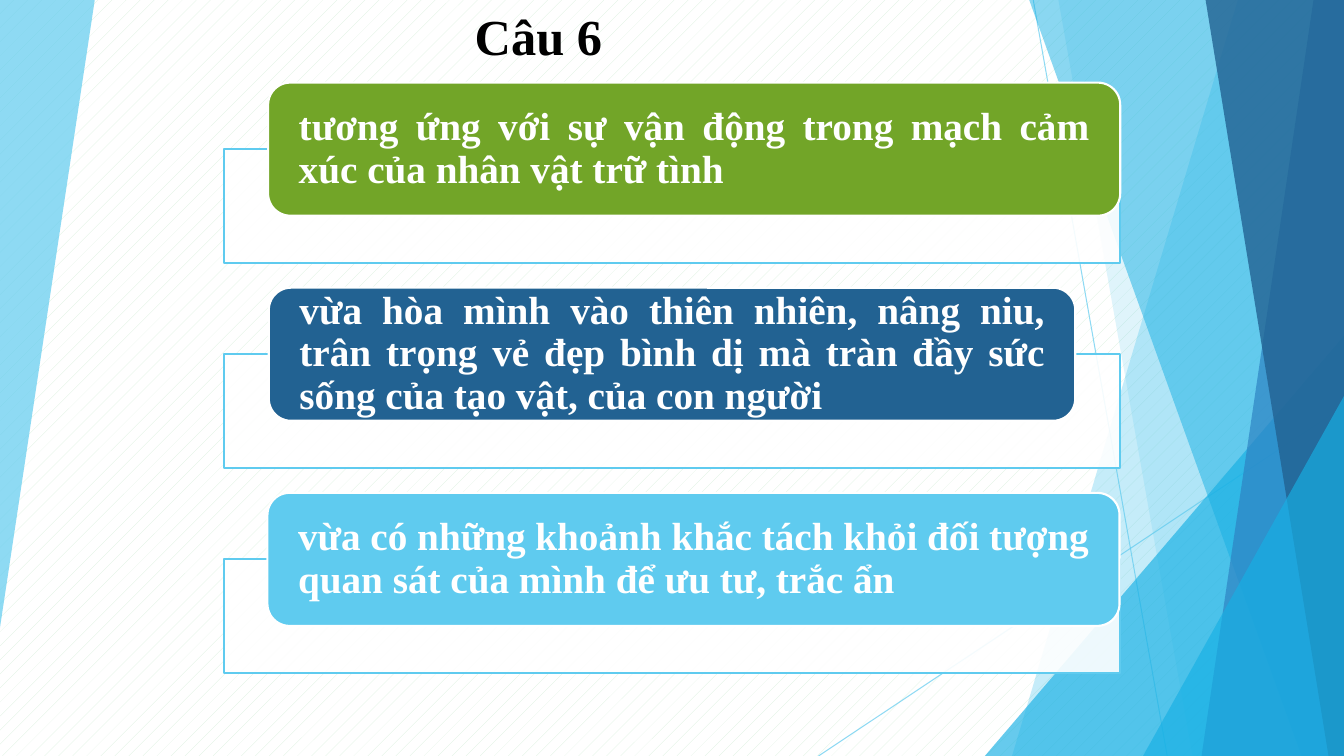
from dataclasses import dataclass

from lxml import etree
from pptx import Presentation
from pptx.dml.color import RGBColor
from pptx.enum.dml import MSO_PATTERN
from pptx.enum.shapes import MSO_CONNECTOR, MSO_SHAPE
from pptx.enum.text import MSO_ANCHOR, MSO_AUTO_SIZE, PP_ALIGN
from pptx.oxml.ns import qn
from pptx.util import Inches, Pt

RECTANGLE = MSO_SHAPE.RECTANGLE
ROUNDED = MSO_SHAPE.ROUNDED_RECTANGLE
TRIANGLE = MSO_SHAPE.ISOSCELES_TRIANGLE
STRAIGHT = MSO_CONNECTOR.STRAIGHT
DOTS = MSO_PATTERN.PERCENT_5
MIDDLE = MSO_ANCHOR.MIDDLE
GROW = MSO_AUTO_SIZE.SHAPE_TO_FIT_TEXT
JUSTIFY, LEFT = PP_ALIGN.JUSTIFY, PP_ALIGN.LEFT

SLIDE_WIDTH, SLIDE_HEIGHT = Inches(13.33), Inches(7.5)


@dataclass(frozen=True)
class Theme:
    font: str = "Times New Roman"
    title_size: float = 36
    card_size: float = 28
    outline: float = 1.5
    hairline: float = 0.75
    black: str = "000000"
    white: str = "FFFFFF"
    dots: str = "D8F0DB"
    sky: str = "5FCBEF"
    cyan: str = "17B0E4"
    blue: str = "2E83C3"
    navy: str = "226292"
    green: str = "72A528"


THEME = Theme()


# All positions and lengths below are percentages of the slide's width or height.
@dataclass(frozen=True)
class Facet:
    points: list[tuple[float, float]]
    color: str
    opacity: float


@dataclass(frozen=True)
class Corner:
    left: float
    top: float
    color: str = THEME.cyan
    opacity: float = 66


@dataclass(frozen=True)
class Ray:
    start: tuple[float, float]
    end: tuple[float, float]


@dataclass(frozen=True)
class Card:
    text: str
    color: str
    left: float
    width: float
    align: PP_ALIGN


def right_facet(top_x: float, bottom_x: float, color: str, opacity: float) -> Facet:
    return Facet([(top_x, 0), (100, 0), (100, 100), (bottom_x, 100)], color, opacity)


LEFT_WEDGE = Facet([(0, 0), (7.05, 0), (0, 83)], THEME.sky, 70)
RAYS = [Ray((76.88, 0), (86.85, 100)), Ray((100, 53.73), (60.9, 100))]
RIGHT_SIDE = [
    right_facet(92.1, 75.3, THEME.sky, 36),
    right_facet(78.75, 88.73, THEME.sky, 20),
    Corner(73.28, 44.4),
    right_facet(76.58, 96.83, THEME.cyan, 50),
    right_facet(97.73, 89.4, THEME.blue, 70),
    right_facet(89.7, 98.85, THEME.navy, 80),
    Corner(85.05, 52.4),
]
CARDS = [
    Card("tương ứng với sự vận động trong mạch cảm xúc của nhân vật trữ tình",
         THEME.green, 19.95, 63.4, JUSTIFY),
    Card("vừa hòa mình vào thiên nhiên, nâng niu, trân trọng vẻ đẹp bình dị "
         "mà tràn đầy sức sống của tạo vật, của con người",
         THEME.navy, 20, 60, JUSTIFY),
    Card("vừa có những khoảnh khắc tách khỏi đối tượng quan sát của mình "
         "để ưu tư, trắc ẩn",
         THEME.sky, 19.9, 63.4, LEFT),
]
RAIL_LEFT, RAIL_WIDTH, RAIL_HEIGHT = 16.67, 66.67, 15.07
CARD_TOP, CARD_HEIGHT, CARD_PITCH = 10.93, 17.6, 27.13
RAIL_DROP = 8.8


def across(share: float) -> int:
    return round(SLIDE_WIDTH * share / 100)


def down(share: float) -> int:
    return round(SLIDE_HEIGHT * share / 100)


def rgb(color: str) -> RGBColor:
    return RGBColor.from_string(color)


def set_opacity(fill_parent, percent: float) -> None:
    color = fill_parent.find(qn("a:solidFill")).find(qn("a:srgbClr"))
    etree.SubElement(color, qn("a:alpha")).set("val", str(round(percent * 1000)))


def paint(shape, color: str, opacity: float = 100, outline: str = "") -> None:
    shape.shadow.inherit = False
    shape.fill.solid()
    shape.fill.fore_color.rgb = rgb(color)
    if opacity < 100:
        set_opacity(shape.element.spPr, opacity)
    if outline:
        shape.line.color.rgb = rgb(outline)
        shape.line.width = Pt(THEME.outline)
    else:
        shape.line.fill.background()


def add_preset(slide, preset, left: float, top: float, width: float, height: float):
    return slide.shapes.add_shape(preset, across(left), down(top),
                                  across(width), down(height))


def add_facet(slide, facet: Facet) -> None:
    corners = [(across(x), down(y)) for x, y in facet.points]
    builder = slide.shapes.build_freeform(*corners[0])
    builder.add_line_segments(corners[1:], close=True)
    paint(builder.convert_to_shape(), facet.color, facet.opacity)


def add_corner(slide, corner: Corner) -> None:
    triangle = add_preset(slide, TRIANGLE, corner.left, corner.top,
                          100 - corner.left, 100 - corner.top)
    triangle.adjustments[0] = 1
    paint(triangle, corner.color, corner.opacity)


def add_ray(slide, ray: Ray) -> None:
    (x1, y1), (x2, y2) = ray.start, ray.end
    line = slide.shapes.add_connector(STRAIGHT, across(x1), down(y1), across(x2), down(y2))
    line.line.color.rgb = rgb(THEME.sky)
    line.line.width = Pt(THEME.hairline)
    properties = line.element.spPr
    set_opacity(properties.find(qn("a:ln")), 70)
    etree.SubElement(properties, qn("a:effectLst"))


def write(frame, text: str, size: float, color: str, align: PP_ALIGN):
    frame.word_wrap = True
    paragraph = frame.paragraphs[0]
    paragraph.alignment = align
    run = paragraph.add_run()
    run.text = text
    run.font.name = THEME.font
    run.font.size = Pt(size)
    run.font.bold = True
    run.font.color.rgb = rgb(color)
    return paragraph


def add_card(slide, card: Card, top: float) -> None:
    rail = add_preset(slide, RECTANGLE, RAIL_LEFT, top + RAIL_DROP, RAIL_WIDTH, RAIL_HEIGHT)
    paint(rail, THEME.white, 90, THEME.sky)
    plate = add_preset(slide, ROUNDED, card.left, top, card.width, CARD_HEIGHT)
    paint(plate, card.color, outline=THEME.white)
    frame = plate.text_frame
    frame.vertical_anchor = MIDDLE
    frame.margin_left = frame.margin_right = across(1.8)
    frame.margin_top = frame.margin_bottom = 0
    write(frame, card.text, THEME.card_size, THEME.white, card.align).line_spacing = 0.9


def main() -> None:
    deck = Presentation()
    deck.slide_width, deck.slide_height = SLIDE_WIDTH, SLIDE_HEIGHT
    slide = deck.slides.add_slide(deck.slide_layouts[6])

    # Dotted background
    backdrop = slide.background.fill
    backdrop.patterned()
    backdrop.pattern = DOTS
    backdrop.fore_color.rgb = rgb(THEME.dots)
    backdrop.back_color.rgb = rgb(THEME.white)

    # Faceted decoration on both sides
    add_facet(slide, LEFT_WEDGE)
    for ray in RAYS:
        add_ray(slide, ray)
    for part in RIGHT_SIDE:
        if isinstance(part, Corner):
            add_corner(slide, part)
        else:
            add_facet(slide, part)

    # Question title
    title = slide.shapes.add_textbox(across(34.58), 0, across(29.78), down(9.47)).text_frame
    title.auto_size = GROW
    write(title, "Câu 6", THEME.title_size, THEME.black, JUSTIFY).space_after = Pt(8)

    # Answer cards, each over its rail
    for row, card in enumerate(CARDS):
        add_card(slide, card, CARD_TOP + row * CARD_PITCH)

    deck.save("out.pptx")


if __name__ == "__main__":
    main()
